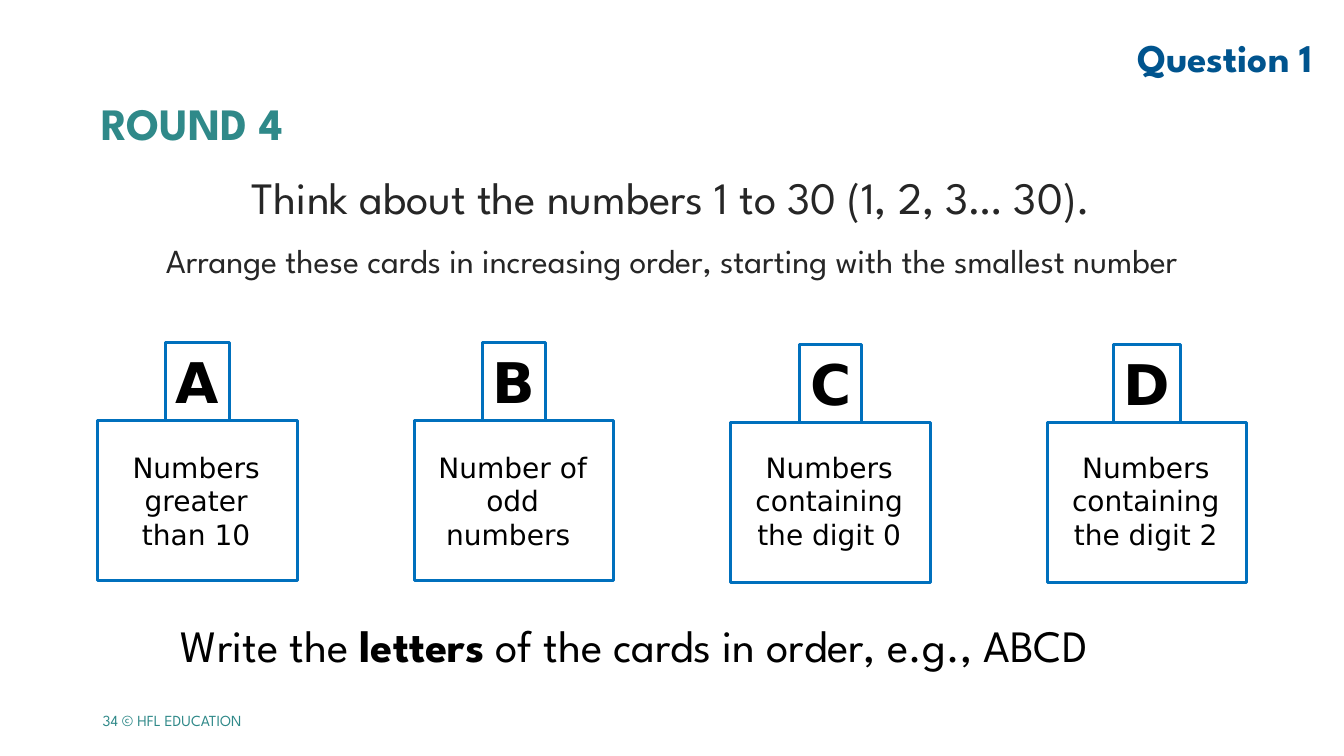
from pptx import Presentation
from pptx.dml.color import RGBColor
from pptx.enum.shapes import MSO_SHAPE
from pptx.enum.text import MSO_ANCHOR, PP_ALIGN
from pptx.util import Pt

RECTANGLE = MSO_SHAPE.RECTANGLE
TOP, MIDDLE = MSO_ANCHOR.TOP, MSO_ANCHOR.MIDDLE
LEFT, CENTER, RIGHT = PP_ALIGN.LEFT, PP_ALIGN.CENTER, PP_ALIGN.RIGHT

TEAL = RGBColor(0x2F, 0x89, 0x89)
NAVY = RGBColor(0x00, 0x54, 0x8E)
BLUE = RGBColor(0x00, 0x70, 0xBD)
CHARCOAL = RGBColor(0x26, 0x26, 0x26)
BLACK = RGBColor(0x00, 0x00, 0x00)
HEADING_FONT = "League Spartan"
CARD_FONT = "DejaVu Sans"

# Content
ROUND = "ROUND 4"
QUESTION = "Question 1"
PROMPT = "Think about the numbers 1 to 30 (1, 2, 3… 30)."
TASK = "Arrange these cards in increasing order, starting with the smallest number"
ANSWER_RUNS = [("Write the ", False), ("letters", True),
               (" of the cards in order, e.g., ABCD", False)]
FOOTER = "34 © HFL EDUCATION"
# letter, statement, card top, tab width, statement width
CARDS = [
    ("A", "Numbers greater than 10", 300.2, 46, 118),
    ("B", "Number of odd numbers ", 300.2, 45.5, 142.6),
    ("C", "Numbers containing the digit 0", 301.7, 44, 142.6),
    ("D", "Numbers containing the digit 2", 301.7, 48, 142.6),
]

# Card layout
CARD_LEFT, CARD_PITCH = 69.8, 226.1
CARD_WIDTH, CARD_HEIGHT = 142.6, 114.5
TAB_HEIGHT = 55.4
STATEMENT_TOP, STATEMENT_HEIGHT = 317.9, 80

# Text formats
ROUND_FORMAT = {"name": HEADING_FONT, "size": Pt(32), "bold": True}
QUESTION_FORMAT = {"name": HEADING_FONT, "size": Pt(28), "bold": True}
PROMPT_FORMAT = {"name": HEADING_FONT, "size": Pt(32)}
TASK_FORMAT = {"name": HEADING_FONT, "size": Pt(24)}
FOOTER_FORMAT = {"name": HEADING_FONT, "size": Pt(11)}
LETTER_FORMAT = {"name": CARD_FONT, "size": Pt(40), "bold": True}
STATEMENT_FORMAT = {"name": CARD_FONT, "size": Pt(20)}


def add_run(paragraph, text, font_format, color):
    run = paragraph.add_run()
    run.text = text
    for attribute, value in font_format.items():
        setattr(run.font, attribute, value)
    run.font.color.rgb = color


def write(shape, paragraphs, color, align=CENTER, anchor=TOP, wrap=True, gap=0):
    """Fill a shape with paragraphs, each a list of (text, format) runs."""
    frame = shape.text_frame
    frame.word_wrap = wrap
    frame.vertical_anchor = anchor
    for index, runs in enumerate(paragraphs):
        paragraph = frame.add_paragraph() if index else frame.paragraphs[0]
        paragraph.alignment = align
        paragraph.line_spacing = 1.0
        paragraph.space_before = Pt(0)
        paragraph.space_after = Pt(gap)
        for text, font_format in runs:
            add_run(paragraph, text, font_format, color)


def add_text(slide, box, paragraphs, color, **options):
    write(slide.shapes.add_textbox(*map(Pt, box)), paragraphs, color, **options)


def add_outline(slide, *box):
    outline = slide.shapes.add_shape(RECTANGLE, *map(Pt, box))
    outline.shadow.inherit = False
    outline.fill.background()
    outline.line.color.rgb = BLUE
    outline.line.width = Pt(2.25)
    return outline


def add_card(slide, index, letter, statement, top, tab_width, statement_width):
    left = CARD_LEFT + index * CARD_PITCH
    middle = left + CARD_WIDTH / 2
    add_outline(slide, left, top, CARD_WIDTH, CARD_HEIGHT)
    tab = add_outline(slide, middle - tab_width / 2, top - TAB_HEIGHT,
                      tab_width, TAB_HEIGHT)
    write(tab, [[(letter, LETTER_FORMAT)]], BLACK, wrap=False)
    add_text(slide, (middle - 1 - statement_width / 2, STATEMENT_TOP,
                     statement_width, STATEMENT_HEIGHT),
             [[(statement, STATEMENT_FORMAT)]], BLACK)


def main():
    presentation = Presentation()
    presentation.slide_width, presentation.slide_height = Pt(960), Pt(540)
    slide = presentation.slides.add_slide(presentation.slide_layouts[5])

    # Title
    title = slide.shapes.title
    title.left, title.top, title.width, title.height = map(
        Pt, (65.5, 42.5, 708.5, 90.7))
    write(title, [[(ROUND, ROUND_FORMAT)]], TEAL, align=LEFT, anchor=MIDDLE)

    # Question number, prompt and task
    add_text(slide, (787.7, 20.2, 157, 41.8),
             [[(QUESTION, QUESTION_FORMAT)]], NAVY, align=RIGHT)
    add_text(slide, (31.7, 117.4, 896.4, 100),
             [[(PROMPT, PROMPT_FORMAT)], [(TASK, TASK_FORMAT)]],
             CHARCOAL, gap=12)

    # Cards
    for index, card in enumerate(CARDS):
        add_card(slide, index, *card)

    # Answer instruction and footer
    answer = [(text, {**PROMPT_FORMAT, "bold": bold}) for text, bold in ANSWER_RUNS]
    add_text(slide, (74.2, 437.8, 758.2, 46), [answer], BLACK)
    add_text(slide, (66.2, 500.4, 198, 28.8), [[(FOOTER, FOOTER_FORMAT)]],
             TEAL, align=LEFT, anchor=MIDDLE)

    presentation.save("out.pptx")


if __name__ == "__main__":
    main()
